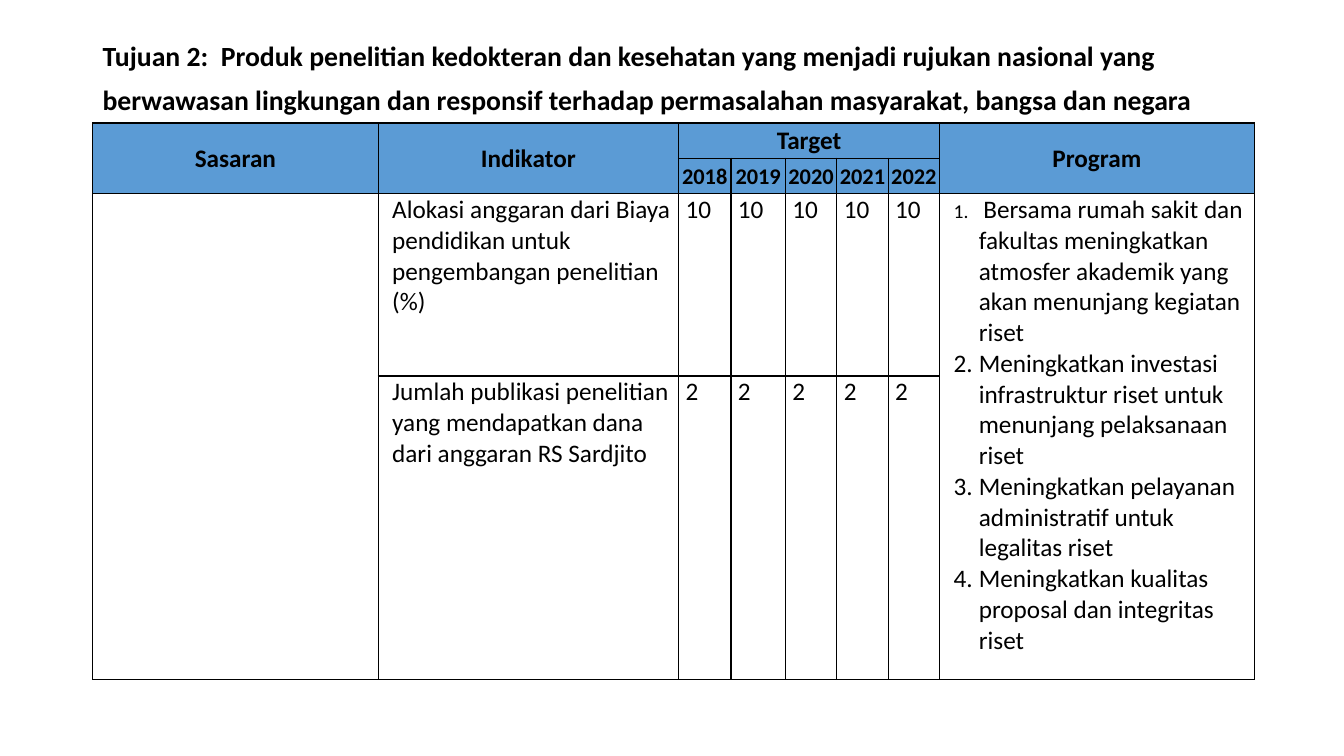
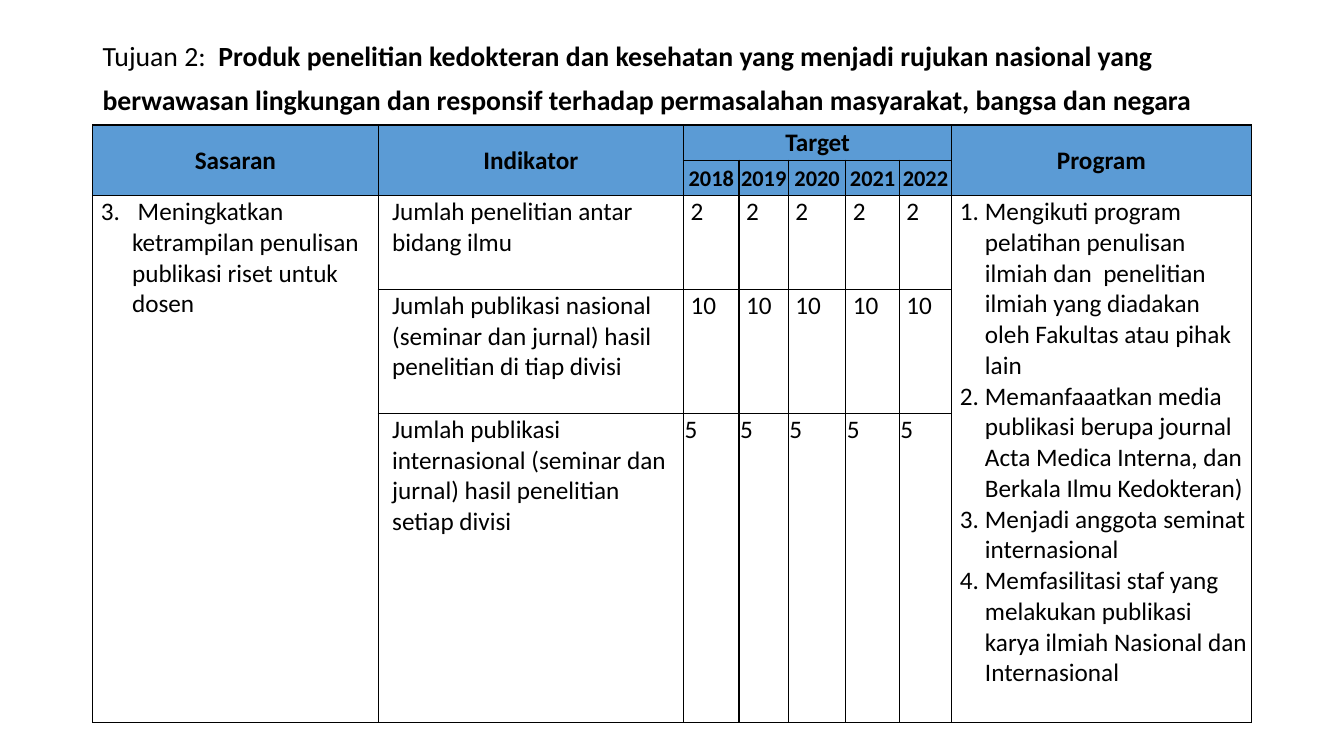
from pptx import Presentation
from pptx.dml.color import RGBColor
from pptx.enum.text import MSO_ANCHOR as Anchor, PP_ALIGN as Align
from pptx.oxml.ns import qn
from pptx.util import Inches, Pt
from lxml.etree import SubElement

BLACK = RGBColor(0x00, 0x00, 0x00)
BLUE = RGBColor(0x5B, 0x9B, 0xD5)
FONT = "Calibri"
SLIDE_W, SLIDE_H = 13.33, 7.5
LEFT, CONTENT_W = 0.92, 11.5
HEADER_ROWS = [0.35, 0.35]
YEARS = range(2018, 2023)
FIRST_YEAR, PROGRAM = 2, 7
PREFIX = "Tujuan 2:  "
GOAL = ("Produk penelitian kedokteran dan kesehatan yang menjadi rujukan nasional yang "
        "berwawasan lingkungan dan responsif terhadap permasalahan masyarakat, "
        "bangsa dan negara")

SLIDES = [
    dict(
        prefix_bold=True, top=1.22,
        cols=[2.83, 2.98, 0.52, 0.54, 0.51, 0.51, 0.51, 3.12],
        heights=[1.81, 3.01],
        sasaran=None,
        indicators=[
            ("Alokasi anggaran dari Biaya pendidikan untuk pengembangan penelitian (%)",
             10, 0.06),
            ("Jumlah publikasi penelitian yang mendapatkan dana dari anggaran RS Sardjito",
             2, 0.06),
        ],
        program_indent=0.38,
        program=[
            [(" ", dict(size=14)),
             ("Bersama rumah sakit dan fakultas meningkatkan atmosfer akademik "
              "yang akan menunjang kegiatan riset", {})],
            "Meningkatkan investasi infrastruktur riset untuk menunjang pelaksanaan riset",
            "Meningkatkan pelayanan administratif untuk legalitas riset",
            "Meningkatkan kualitas proposal dan integritas riset",
        ],
    ),
    dict(
        prefix_bold=False, top=1.24,
        cols=[2.83, 3.03, 0.55, 0.49, 0.57, 0.53, 0.52, 2.97],
        heights=[0.93, 1.23, 3.07],
        sasaran=" Meningkatkan ketrampilan penulisan publikasi riset untuk dosen",
        indicators=[
            ("Jumlah penelitian antar bidang ilmu", 2, 0.06),
            ("Jumlah publikasi nasional (seminar dan jurnal) hasil penelitian di tiap divisi",
             10, 0.06),
            ("Jumlah publikasi internasional (seminar dan jurnal) hasil penelitian setiap divisi",
             5, 0),
        ],
        program_indent=0.32,
        program=[
            "Mengikuti program pelatihan penulisan ilmiah dan  penelitian ilmiah "
            "yang diadakan oleh Fakultas atau pihak lain",
            "Memanfaaatkan media publikasi berupa journal Acta Medica Interna, "
            "dan Berkala Ilmu Kedokteran)",
            "Menjadi anggota seminat internasional",
            "Memfasilitasi staf yang melakukan publikasi karya ilmiah Nasional dan Internasional",
        ],
    ),
]


def write(tf, *paragraphs, size=18, bold=False, align=Align.LEFT, spacing=None,
          indent=0, hanging=0, start=None):
    for i, runs in enumerate(paragraphs):
        p = tf.add_paragraph() if i else tf.paragraphs[0]
        p.alignment = align
        if spacing:
            p.line_spacing = spacing
        pPr = p._p.get_or_add_pPr()
        pPr.set("marL", str(Inches(indent)))
        pPr.set("indent", str(-Inches(hanging)))
        if start:
            SubElement(pPr, qn("a:buAutoNum"), type="arabicPeriod", startAt=str(start))
        for text, style in [(runs, {})] if isinstance(runs, str) else runs:
            r = p.add_run()
            r.text = text
            r.font.name = FONT
            r.font.size = Pt(style.get("size", size))
            r.font.bold = style.get("bold", bold)
            r.font.color.rgb = BLACK


def add_title(s, prefix_bold):
    sp = s.shapes.add_textbox(Inches(LEFT), Inches(0.4), Inches(CONTENT_W), Inches(0.71))
    tf = sp.text_frame
    tf.word_wrap = True
    tf.vertical_anchor = Anchor.MIDDLE
    tf.margin_bottom = Inches(0.13)
    write(tf, [(PREFIX, dict(bold=prefix_bold)), (GOAL, {})],
          size=19.8, bold=True, spacing=1.32)


def format_cell(cell, header):
    cell.margin_left = cell.margin_right = cell.margin_top = Inches(0.01)
    cell.margin_bottom = 0
    cell.vertical_anchor = Anchor.MIDDLE if header else Anchor.TOP
    tcPr = cell._tc.get_or_add_tcPr()
    for side in "LRTB":
        ln = SubElement(tcPr, qn(f"a:ln{side}"), w=str(Pt(1)))
        fill = SubElement(ln, qn("a:solidFill"))
        SubElement(fill, qn("a:srgbClr"), val=str(BLACK))
    if header:
        cell.fill.solid()
        cell.fill.fore_color.rgb = BLUE
    else:
        cell.fill.background()


def add_grid(s, top, cols, rows):
    frame = s.shapes.add_table(len(rows), len(cols), Inches(LEFT), Inches(top),
                               Inches(CONTENT_W), Inches(sum(rows)))
    table = frame.table
    table.first_row = table.horz_banding = False
    for column, width in zip(table.columns, cols):
        column.width = Inches(width)
    for i, (row, height) in enumerate(zip(table.rows, rows)):
        row.height = Inches(height)
        for cell in row.cells:
            format_cell(cell, i < len(HEADER_ROWS))
    return table


def fill_header(table):
    last_year = PROGRAM - 1
    for text, col, end in [("Sasaran", 0, (1, 0)), ("Indikator", 1, (1, 1)),
                           ("Target", FIRST_YEAR, (0, last_year)),
                           ("Program", PROGRAM, (1, PROGRAM))]:
        cell = table.cell(0, col)
        cell.merge(table.cell(*end))
        write(cell.text_frame, text, bold=True, align=Align.CENTER)
    for col, year in enumerate(YEARS, FIRST_YEAR):
        write(table.cell(1, col).text_frame, str(year),
              size=16, bold=True, align=Align.CENTER)


def fill_body(table, data):
    first, last = len(HEADER_ROWS), len(table.rows) - 1
    for col in (0, PROGRAM):
        table.cell(first, col).merge(table.cell(last, col))
    if data["sasaran"]:
        write(table.cell(first, 0).text_frame, data["sasaran"],
              indent=0.38, hanging=0.31, start=3)
    write(table.cell(first, PROGRAM).text_frame, *data["program"],
          indent=data["program_indent"], hanging=0.25, start=1)
    for row, (text, target, indent) in enumerate(data["indicators"], first):
        write(table.cell(row, 1).text_frame, text, indent=0.13)
        for col in range(FIRST_YEAR, PROGRAM):
            write(table.cell(row, col).text_frame, str(target), indent=indent)


def main():
    prs = Presentation()
    prs.slide_width, prs.slide_height = Inches(SLIDE_W), Inches(SLIDE_H)
    for data in SLIDES:
        s = prs.slides.add_slide(prs.slide_layouts[6])
        add_title(s, data["prefix_bold"])
        table = add_grid(s, data["top"], data["cols"], HEADER_ROWS + data["heights"])
        fill_header(table)
        fill_body(table, data)
    prs.save("out.pptx")


if __name__ == "__main__":
    main()
